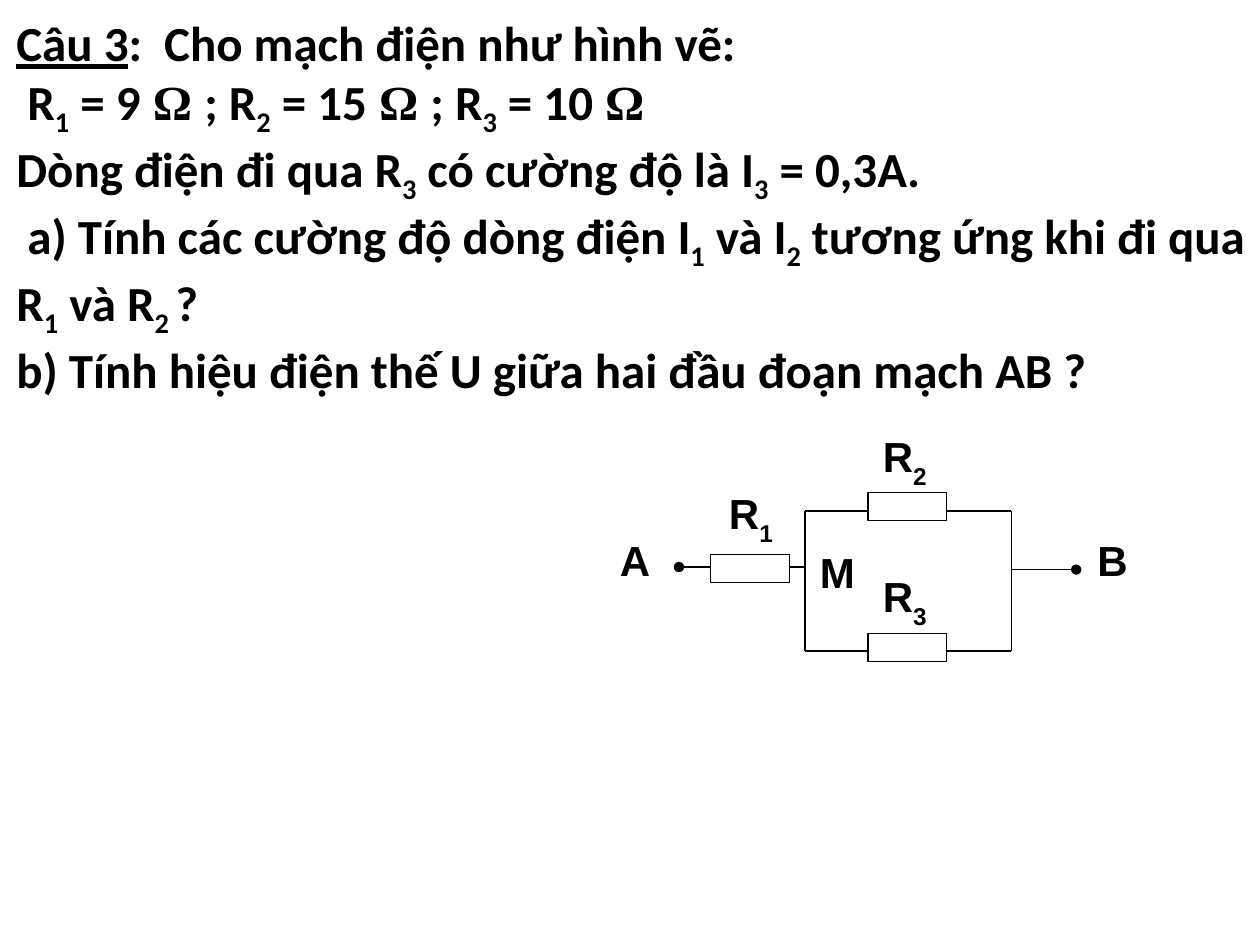
from dataclasses import dataclass

from lxml import etree
from pptx import Presentation
from pptx import util as u
from pptx.dml.color import RGBColor
from pptx.enum import shapes, text
from pptx.oxml.ns import qn


@dataclass(frozen=True)
class Theme:
    """Colours, fonts and sizes of the slide."""
    ink: RGBColor = RGBColor(0, 0, 0)
    paper: RGBColor = RGBColor(255, 255, 255)
    problem_font: str = "Calibri"
    symbol_font: str = "Times New Roman"
    circuit_font: str = "Arial"
    problem_size: int = 28
    circuit_size: int = 24
    wire_width: float = 0.75
    resistor: tuple = (45, 16)
    resistor_label: tuple = (27.36, 47.5)


THEME = Theme()


def write(paragraph, content, *, font, size, drop=-25, underline=False):
    """Add bold runs; ~ encloses subscripts and ^ encloses symbols."""
    for level, part in enumerate(content.split("~")):
        for kind, piece in enumerate(part.split("^")):
            if not piece:
                continue
            run = paragraph.add_run()
            run.text = piece
            run.font.name = THEME.symbol_font if kind % 2 else font
            run.font.size = u.Pt(size)
            run.font.bold = True
            run.font.underline = underline
            run.font.color.rgb = THEME.ink
            if level % 2:
                run.font._element.set("baseline", str(drop * 1000))


class CircuitSlide:
    """Hold the theme and the slide that receives the circuit."""

    def __init__(self, deck, theme):
        self.theme = theme
        self.slide = deck.slides.add_slide(deck.slide_layouts[1])
        heading = self.slide.shapes.title._element
        heading.getparent().remove(heading)

    def problem(self, statements, left, top, width, height):
        """Fill the body placeholder with the statements of the problem."""
        body = self.slide.placeholders[1]
        body.left, body.top, body.width, body.height = map(u.Pt, (left, top, width, height))
        frame = body.text_frame
        frame.word_wrap = True
        frame.auto_size = text.MSO_AUTO_SIZE.SHAPE_TO_FIT_TEXT
        for index, pieces in enumerate(statements):
            paragraph = frame.add_paragraph() if index else frame.paragraphs[0]
            paragraph.space_before = u.Pt(0)
            properties = paragraph._p.get_or_add_pPr()
            properties.set("marL", "0")
            properties.set("indent", "0")
            etree.SubElement(properties, qn("a:buNone"))
            for content, underline in pieces:
                write(paragraph, content, font=self.theme.problem_font,
                      size=self.theme.problem_size, underline=underline)

    def wire(self, start, end, terminal=None):
        """Draw a wire, with a dot at its headEnd or tailEnd if asked."""
        wire = self.slide.shapes.add_connector(
            shapes.MSO_CONNECTOR.STRAIGHT, *map(u.Pt, (*start, *end)))
        wire.line.color.rgb = self.theme.ink
        wire.line.width = u.Pt(self.theme.wire_width)
        if terminal:
            etree.SubElement(wire.line._get_or_add_ln(), qn(f"a:{terminal}"), type="oval")
        etree.SubElement(wire._element.spPr, qn("a:effectLst"))

    def box(self, left, top, width, height, outline):
        """Draw a paper-coloured rectangle."""
        box = self.slide.shapes.add_shape(
            shapes.MSO_SHAPE.RECTANGLE, *map(u.Pt, (left, top, width, height)))
        box.shadow.inherit = False
        box.fill.solid()
        box.fill.fore_color.rgb = self.theme.paper
        box.line.color.rgb = outline
        box.line.width = u.Pt(self.theme.wire_width)
        return box

    def name(self, paragraph, content, align):
        """Write the name of a circuit part."""
        paragraph.alignment = align
        write(paragraph, content, font=self.theme.circuit_font,
              size=self.theme.circuit_size, drop=-30)

    def label(self, content, left, top, width, height, align=text.PP_ALIGN.LEFT):
        """Place a label without margins."""
        label = self.slide.shapes.add_textbox(*map(u.Pt, (left, top, width, height)))
        frame = label.text_frame
        frame.word_wrap = True
        frame.margin_left = frame.margin_right = frame.margin_top = frame.margin_bottom = 0
        self.name(frame.paragraphs[0], content, align)

    def resistor(self, content, left, top, label_left, label_top):
        """Draw a resistor and its label."""
        self.box(left, top, *self.theme.resistor, self.theme.ink)
        self.label(content, label_left, label_top, *self.theme.resistor_label,
                   text.PP_ALIGN.CENTER)

    def node(self, content, left, top, width, height):
        """Name a junction inside a box without a visible outline."""
        node = self.box(left, top, width, height, self.theme.paper)
        node.text_frame.vertical_anchor = text.MSO_ANCHOR.MIDDLE
        self.name(node.text_frame.paragraphs[0], content, text.PP_ALIGN.LEFT)


def main():
    """Build the parallel-circuit exercise."""
    deck = Presentation()
    deck.slide_width, deck.slide_height = u.Pt(720), u.Pt(540)
    page = CircuitSlide(deck, THEME)
    page.problem([
        [("Câu 3", True), (":  Cho mạch điện như hình vẽ:", False)],
        [(" R~1~ = 9^ Ω ^; R~2~ = 15^ Ω ^; R~3~ = 10^ Ω^", False)],
        [("Dòng điện đi qua R~3~ có cường độ là I~3~ = 0,3A.", False)],
        [(" a) Tính các cường độ dòng điện I~1~ và I~2~ tương ứng khi đi qua "
          "R~1~ và R~2 ~?", False)],
        [("b) Tính hiệu điện thế U giữa hai đầu đoạn mạch AB ?", False)],
    ], 2.16, 3.6, 718, 211)

    junction_m, junction_b = 460, 578
    upper, lower = 292, 372
    for branch in (upper, lower):
        page.wire((junction_m, branch), (junction_b, branch))
    for junction in (junction_m, junction_b):
        page.wire((junction, upper), (junction, lower))
    page.wire((388, 324), (junction_m, 324), "headEnd")
    page.wire((junction_b, 325.5), (615, 325.5), "tailEnd")

    page.resistor("R~1~", 406, 316.8, 415.4, 278.6)
    page.resistor("R~2~", 496, 281.5, 503.3, 246.2)
    page.resistor("R~3~", 496, 362.2, 503.3, 326.2)
    for terminal, left in (("A", 354.2), ("B", 627.1)):
        page.label(terminal, left, 305.3, 26.6, 33)
    page.node("M", 461.5, 306, 39, 41.8)
    deck.save("out.pptx")


if __name__ == "__main__":
    main()
